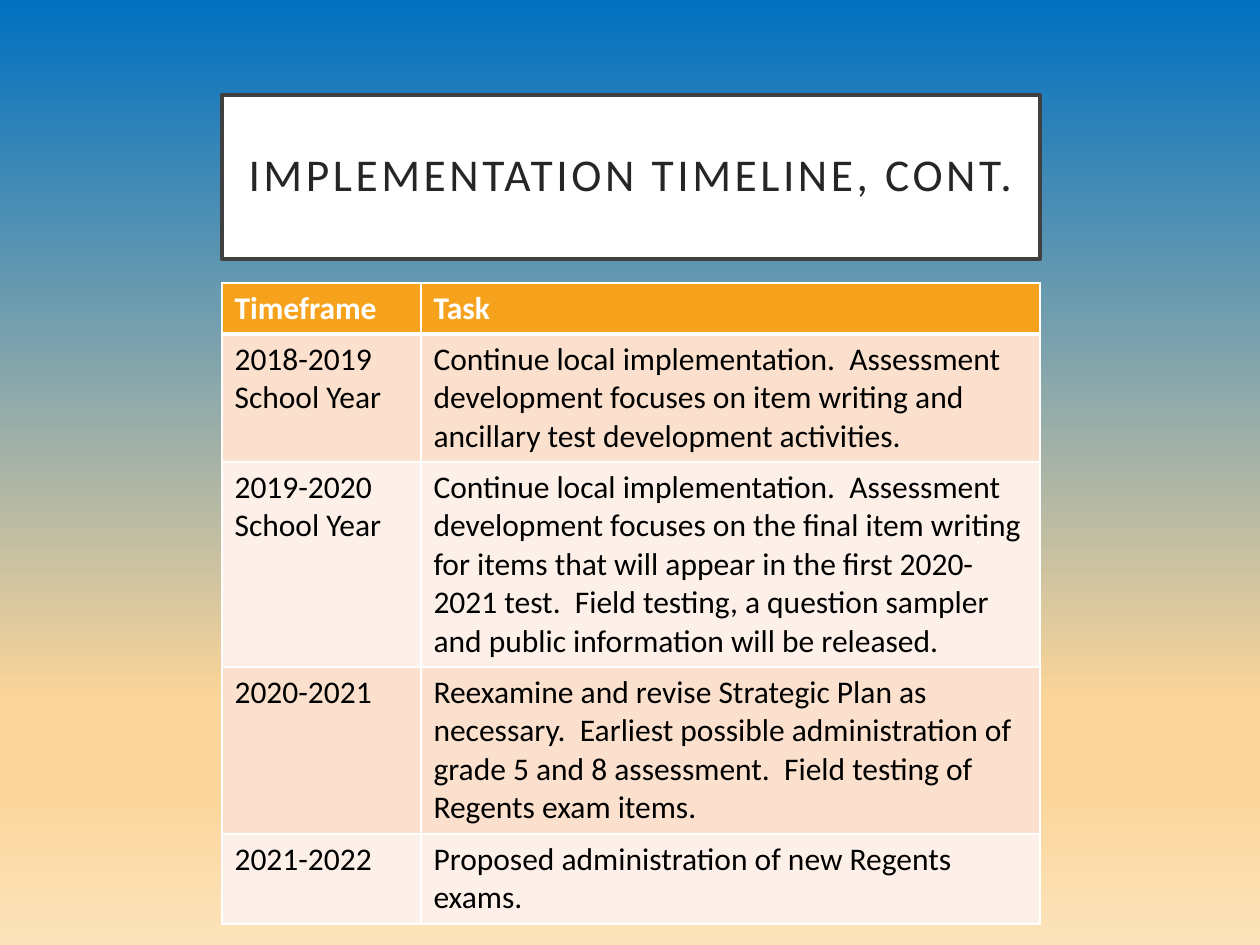
from lxml.etree import SubElement
from pptx import Presentation
from pptx.dml.color import RGBColor
from pptx.enum.shapes import MSO_SHAPE as Shape
from pptx.enum.text import MSO_ANCHOR as Anchor, PP_ALIGN as Align
from pptx.oxml.ns import qn
from pptx.util import Emu, Pt

PX = 914400 // 126
LEFT, WIDTH = 222, 818
COLUMN_WIDTHS = (199, 619)
ROW_HEIGHTS = (50, 128, 205, 167, 90)
HEADER_FILL = "F6A21D"
BAND_FILLS = ("FDF0E8", "FBE0CD")
SKY_TO_SAND = ((0, "0070C0"), (74, "FBD599"), (83, "FBD599"), (100, "FCE3BB"))
TIMELINE = (
    ("Timeframe", "Task"),
    ("2018-2019 School Year",
     "Continue local implementation.  Assessment development focuses on item "
     "writing and ancillary test development activities."),
    ("2019-2020 School Year",
     "Continue local implementation.  Assessment development focuses on the "
     "final item writing for items that will appear in the first 2020-2021 "
     "test.  Field testing, a question sampler and public information will be "
     "released."),
    ("2020-2021",
     "Reexamine and revise Strategic Plan as necessary.  Earliest possible "
     "administration of grade 5 and 8 assessment.  Field testing of Regents "
     "exam items."),
    ("2021-2022", "Proposed administration of new Regents exams."),
)


def px(length):
    return Emu(length * PX)


def color(value):
    return RGBColor.from_string(value)


def add_run(paragraph, text, size, ink, bold=False):
    run = paragraph.add_run()
    run.text = text
    run.font.name = "Calibri"
    run.font.size = Pt(size)
    run.font.bold = bold
    run.font.color.rgb = color(ink)
    return run


def paint_background(slide, stops):
    fill = slide.background.fill
    fill.gradient()
    fill.gradient_angle = 270
    stop_list = slide.element.find(".//" + qn("a:gsLst"))
    for default_stop in list(stop_list):
        stop_list.remove(default_stop)
    for percent, value in stops:
        stop = SubElement(stop_list, qn("a:gs"), pos=str(percent * 1000))
        SubElement(stop, qn("a:srgbClr"), val=value)


def add_title(slide, text):
    banner = slide.shapes.add_shape(
        Shape.RECTANGLE, px(LEFT), px(95), px(WIDTH), px(164))
    banner.shadow.inherit = False
    banner.fill.solid()
    banner.fill.fore_color.rgb = color("FFFFFF")
    banner.line.color.rgb = color("404040")
    banner.line.width = Pt(2.5)
    frame = banner.text_frame
    frame.word_wrap = True
    frame.vertical_anchor = Anchor.MIDDLE
    frame.margin_left = frame.margin_right = px(25)
    frame.margin_top = frame.margin_bottom = px(25)
    heading = frame.paragraphs[0]
    heading.alignment = Align.CENTER
    heading.line_spacing = 0.9
    run = add_run(heading, text, 26, "262626")
    run.font._element.set("spc", "200")


def set_borders(cell, top, bottom):
    properties = cell._tc.get_or_add_tcPr()
    for side, points in (("L", 1), ("R", 1), ("T", top), ("B", bottom)):
        line = SubElement(properties, qn("a:ln" + side), w=str(Pt(points)))
        fill = SubElement(line, qn("a:solidFill"))
        SubElement(fill, qn("a:srgbClr"), val="FFFFFF")


def add_timeline(slide, entries):
    table = slide.shapes.add_table(
        len(entries), len(COLUMN_WIDTHS), px(LEFT), px(283),
        px(WIDTH), px(sum(ROW_HEIGHTS))).table
    for column, width in zip(table.columns, COLUMN_WIDTHS):
        column.width = px(width)
    for index, (entry, height) in enumerate(zip(entries, ROW_HEIGHTS)):
        is_header = index == 0
        table.rows[index].height = px(height)
        for cell, text in zip(table.rows[index].cells, entry):
            set_borders(cell, 3 if index == 1 else 1, 3 if is_header else 1)
            cell.fill.solid()
            cell.fill.fore_color.rgb = color(
                HEADER_FILL if is_header else BAND_FILLS[index % 2])
            add_run(cell.text_frame.paragraphs[0], text, 18,
                    "FFFFFF" if is_header else "000000", is_header)


def main():
    deck = Presentation()
    deck.slide_width, deck.slide_height = px(1260), px(945)
    slide = deck.slides.add_slide(deck.slide_layouts[6])
    paint_background(slide, SKY_TO_SAND)
    add_title(slide, "IMPLEMENTATION TIMELINE, CONT.")
    add_timeline(slide, TIMELINE)
    deck.save("out.pptx")


if __name__ == "__main__":
    main()
